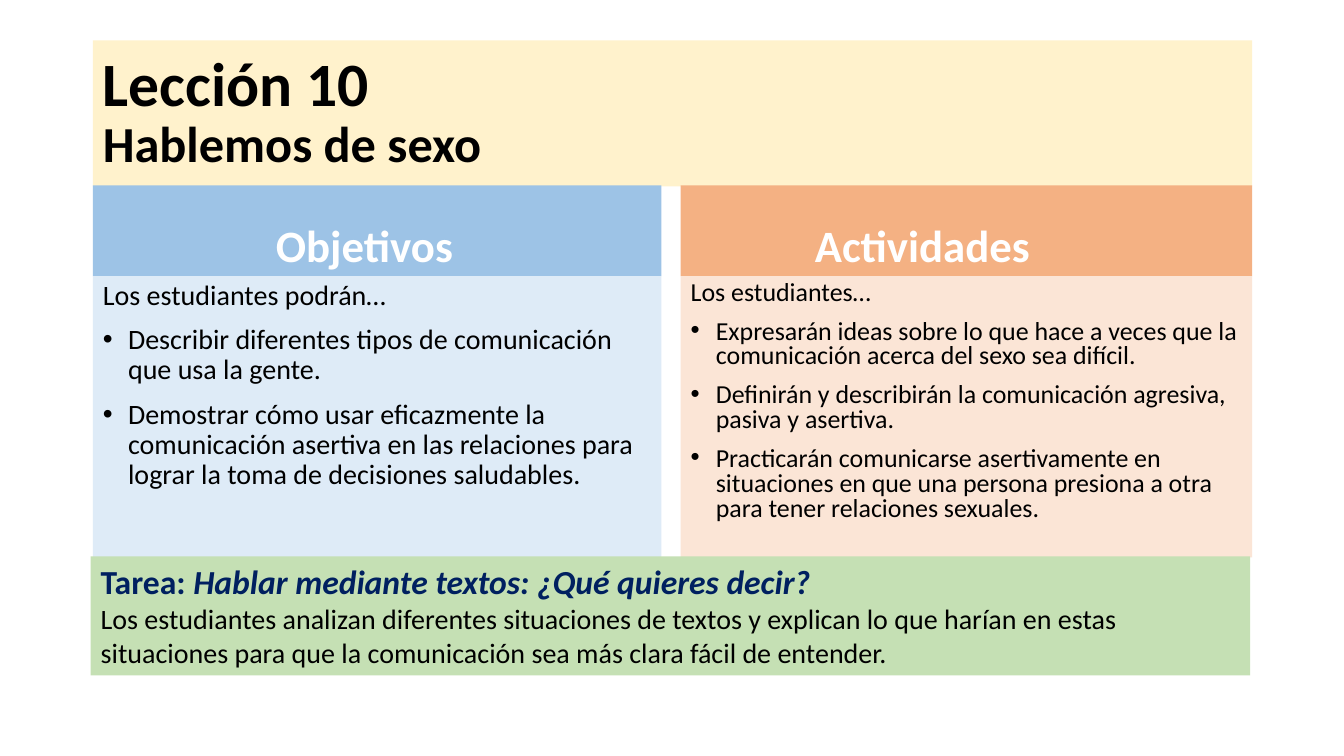
from pptx import Presentation
from pptx.dml.color import RGBColor
from pptx.enum import shapes, text
from pptx.oxml import parse_xml
from pptx.oxml.ns import nsdecls
from pptx.util import Inches, Pt

TITLE = [("Lección 10", 44), ("Hablemos de sexo", 36)]
# Each column: left, width, right inset of heading, fills, body size, line spacing
COLUMNS = [
    dict(left=0.92, width=5.64, inset=0.35, fills=("9DC3E6", "DEEBF7"),
         size=20, spacing=0.9, head="Objetivos", intro="Los estudiantes podrán…",
         items=["Describir diferentes tipos de comunicación que usa la gente.",
                "Demostrar cómo usar eficazmente la comunicación asertiva en las "
                "relaciones para lograr la toma de decisiones saludables."]),
    dict(left=6.75, width=5.67, inset=0.97, fills=("F4B183", "FBE5D6"),
         size=18.5, spacing=0.8, head="Actividades", intro="Los estudiantes…",
         items=["Expresarán ideas sobre lo que hace a veces que la comunicación "
                "acerca del sexo sea difícil.",
                "Definirán y describirán la comunicación agresiva, pasiva y asertiva.",
                "Practicarán comunicarse asertivamente en situaciones en que una "
                "persona presiona a otra para tener relaciones sexuales."]),
]
TASK = [("Tarea: ", False), ("Hablar mediante textos: ¿Qué quieres decir?", True)]
TASK_BODY = ("Los estudiantes analizan diferentes situaciones de textos y explican lo "
             "que harían en estas situaciones para que la comunicación sea más clara "
             "fácil de entender.")
HEAD_TOP, BODY_TOP, BODY_H = 1.84, 2.74, 2.79


def color(code):
    return RGBColor.from_string(code)


def panel(shape, box, fill, anchor):
    """Place a filled panel and return its text frame."""
    shape.left, shape.top, shape.width, shape.height = map(Inches, box)
    shape.fill.solid()
    shape.fill.fore_color.rgb = color(fill)
    frame = shape.text_frame
    frame.word_wrap = True
    frame.auto_size = text.MSO_AUTO_SIZE.NONE
    frame.vertical_anchor = anchor
    return frame


def style(para, size, code="000000", bold=False, align=text.PP_ALIGN.LEFT,
          spacing=1.0, before=0):
    font = para.font
    font.name, font.size, font.bold = "Calibri", Pt(size), bold
    font.color.rgb = color(code)
    para.alignment, para.line_spacing = align, spacing
    para.space_before = Pt(before)


def bullet(para, shown):
    props = para._p.get_or_add_pPr()
    indent = Inches(0.25) if shown else 0
    props.set("marL", str(indent))
    props.set("indent", str(-indent))
    mark = 'buChar {} char="•"' if shown else "buNone {}"
    props.append(parse_xml(f"<a:{mark.format(nsdecls('a'))}/>"))


def add_title(shape):
    frame = panel(shape, (0.92, 0.4, 11.5, 1.45), "FFF2CC", text.MSO_ANCHOR.MIDDLE)
    para = frame.paragraphs[0]
    style(para, TITLE[0][1], bold=True, spacing=0.9)
    for i, (line, size) in enumerate(TITLE):
        if i:
            para.add_line_break()
        run = para.add_run()
        run.text = line
        run.font.size = Pt(size)


def add_column(head, body, col):
    left, width = col["left"], col["width"]
    frame = panel(head, (left, HEAD_TOP, width, BODY_TOP - HEAD_TOP),
                  col["fills"][0], text.MSO_ANCHOR.BOTTOM)
    frame.margin_right = Inches(col["inset"])
    frame.text = col["head"]
    style(frame.paragraphs[0], 32, "FFFFFF", True, text.PP_ALIGN.CENTER)

    frame = panel(body, (left, BODY_TOP, width, BODY_H),
                  col["fills"][1], text.MSO_ANCHOR.TOP)
    frame.text = "\n".join([col["intro"], *col["items"]])
    for i, para in enumerate(frame.paragraphs):
        style(para, col["size"], spacing=col["spacing"], before=10)
        bullet(para, i > 0)


def add_task(slide):
    shape = slide.shapes.add_shape(shapes.MSO_SHAPE.RECTANGLE, 0, 0, 0, 0)
    shape.shadow.inherit = False
    shape.line.fill.background()
    frame = panel(shape, (0.9, 5.52, 11.5, 1.18), "C5E0B4", text.MSO_ANCHOR.TOP)
    head = frame.paragraphs[0]
    style(head, 24, "002060", True)
    for words, italic in TASK:
        run = head.add_run()
        run.text = words
        run.font.italic = italic
    para = frame.add_paragraph()
    para.text = TASK_BODY
    style(para, 20)


def main():
    deck = Presentation()
    deck.slide_width, deck.slide_height = Inches(13.33), Inches(7.5)
    slide = deck.slides.add_slide(deck.slide_layouts.get_by_name("Comparison"))
    title, *parts = slide.placeholders
    add_title(title)
    for i, col in enumerate(COLUMNS):
        add_column(parts[2 * i], parts[2 * i + 1], col)
    add_task(slide)
    deck.save("out.pptx")


if __name__ == "__main__":
    main()
